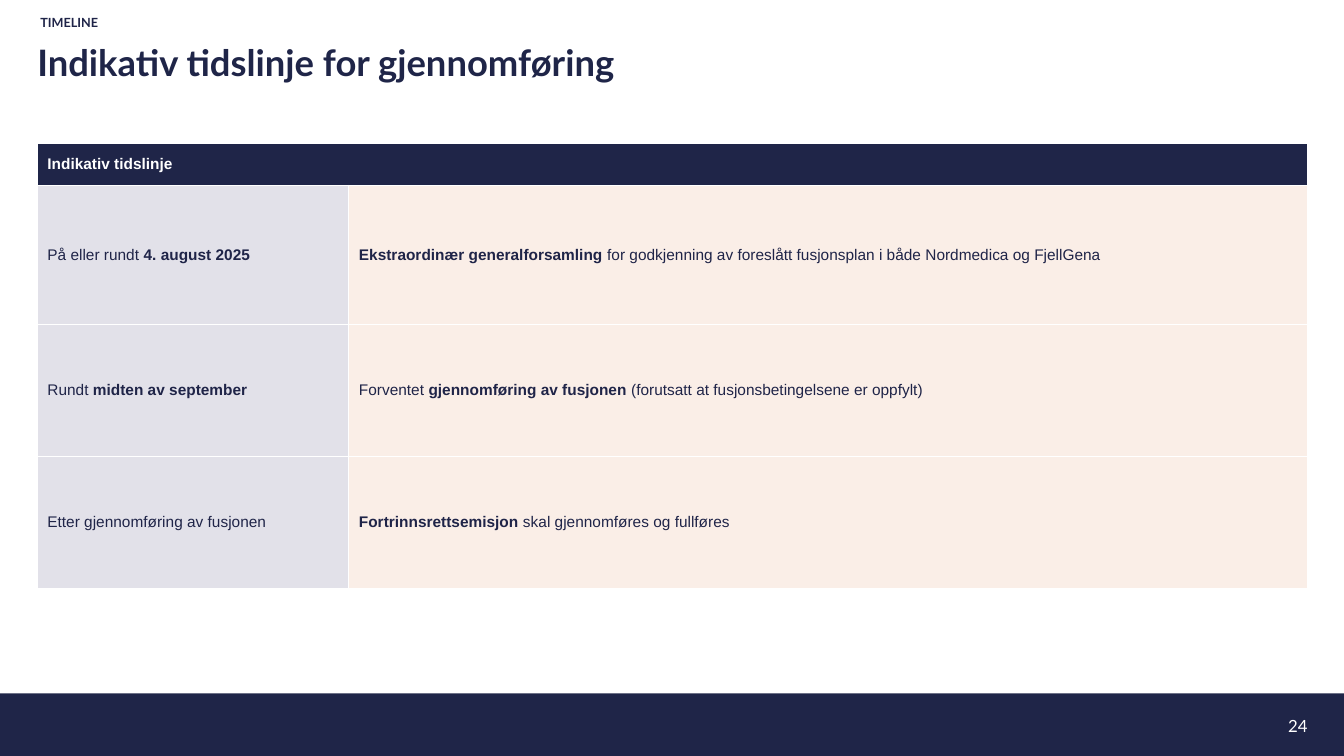
from lxml import etree
from pptx import Presentation
from pptx.dml.color import RGBColor
from pptx.enum import shapes, text
from pptx.oxml import ns
from pptx.util import Inches, Pt

NAVY, INK, WHITE = "1F2548", "1F2448", "FFFFFF"
LILAC, PEACH = "C7C4D4", "F7DED0"
COLUMN_WIDTHS = (3.09, 9.51)
ROW_HEIGHTS = (0.42, 1.38, 1.31, 1.31)

# Each cell is a list of (wording, bold) runs.
MILESTONES = [
    ([("På eller rundt ", False), ("4. august 2025", True)],
     [("Ekstraordinær generalforsamling", True),
      (" for godkjenning av foreslått fusjonsplan i både Nordmedica og FjellGena", False)]),
    ([("Rundt ", False), ("midten av september", True)],
     [("Forventet ", False), ("gjennomføring av fusjonen", True),
      (" (forutsatt at fusjonsbetingelsene er oppfylt)", False)]),
    ([("Etter gjennomføring av fusjonen", False)],
     [("Fortrinnsrettsemisjon ", True), ("skal gjennomføres og fullføres", False)]),
]


def rgb(value):
    return RGBColor.from_string(value)


def add_run(paragraph, wording, size, font, color, bold=False):
    run = paragraph.add_run()
    run.text = wording
    run.font.size, run.font.name, run.font.bold = Pt(size), font, bold
    run.font.color.rgb = rgb(color)


def add_label(slide, box, wording, size, color, bold=True, insets=(0, 0, 0, 0), wrap=True):
    """Add a one-line Lato text box; return its frame and paragraph."""
    frame = slide.shapes.add_textbox(*map(Inches, box)).text_frame
    frame.word_wrap = wrap
    (frame.margin_left, frame.margin_top,
     frame.margin_right, frame.margin_bottom) = map(Inches, insets)
    line = frame.paragraphs[0]
    add_run(line, wording, size, "Lato", color, bold)
    return frame, line


def add_heading(slide, left, top, width):
    _, title = add_label(slide, (left, top + 0.24, width, 0.81),
                         "Indikativ tidslinje for gjennomføring", 26, NAVY,
                         insets=(0, 0.05, 0.1, 0.05))
    _, section = add_label(slide, (left + 0.03, top, width, 0.29),
                           "TIMELINE", 9, INK, wrap=False)
    title.line_spacing = section.line_spacing = 0.9


def add_footer(slide, top, width, height):
    band = slide.shapes.add_shape(shapes.MSO_SHAPE.RECTANGLE, 0, Inches(top),
                                  Inches(width), Inches(height))
    band.shadow.inherit = False
    band.fill.solid()
    band.fill.fore_color.rgb = rgb(NAVY)
    band.line.fill.background()
    frame, number = add_label(slide, (width - 0.86, top + 0.12, 0.5, 0.4), "24", 12, WHITE,
                              bold=False, insets=(0.1, 0.05, 0, 0.05))
    frame.vertical_anchor = text.MSO_ANCHOR.MIDDLE
    number.alignment = text.PP_ALIGN.RIGHT


def add_borders(cell, sides):
    properties = cell._tc.get_or_add_tcPr()
    for side in sides:
        border = etree.SubElement(properties, ns.qn(f"a:ln{side}"), w=str(Pt(1)))
        fill = etree.SubElement(border, ns.qn("a:solidFill"))
        etree.SubElement(fill, ns.qn("a:srgbClr"), val=WHITE)


def fill_cell(cell, color, alpha=None):
    cell.fill.solid()
    cell.fill.fore_color.rgb = rgb(color)
    if alpha:
        shade = cell._tc.tcPr.find(".//" + ns.qn("a:solidFill") + "[last()]")
        shade = cell._tc.tcPr.find(ns.qn("a:solidFill")) if shade is None else shade
        shade = cell._tc.tcPr.find(ns.qn("a:solidFill") + "/" + ns.qn("a:srgbClr"))
        etree.SubElement(shade, ns.qn("a:alpha"), val=str(alpha * 1000))


def write_cell(cell, runs, color):
    cell.vertical_anchor = text.MSO_ANCHOR.MIDDLE
    for wording, bold in runs:
        add_run(cell.text_frame.paragraphs[0], wording, 11, "Arial", color, bold)


def add_timeline(slide, left, top):
    table = slide.shapes.add_table(
        len(ROW_HEIGHTS), len(COLUMN_WIDTHS), Inches(left), Inches(top),
        Inches(sum(COLUMN_WIDTHS)), Inches(sum(ROW_HEIGHTS))).table
    for column, width in zip(table.columns, COLUMN_WIDTHS):
        column.width = Inches(width)
    for row, height in zip(table.rows, ROW_HEIGHTS):
        row.height = Inches(height)

    header = table.cell(0, 0)
    header.merge(table.cell(0, 1))
    for cell in table.rows[0].cells:
        add_borders(cell, "RTB")
        fill_cell(cell, NAVY)
    write_cell(header, [("Indikativ tidslinje", True)], WHITE)

    for row, milestone in enumerate(MILESTONES, 1):
        for column, (runs, color, sides) in enumerate(
                zip(milestone, (LILAC, PEACH), ("RTB", "LRTB"))):
            cell = table.cell(row, column)
            add_borders(cell, sides)
            fill_cell(cell, color, alpha=50)
            write_cell(cell, runs, INK)


def main():
    deck = Presentation()
    deck.slide_width, deck.slide_height = Inches(13.33), Inches(7.5)
    slide = deck.slides.add_slide(deck.slide_layouts[6])
    add_footer(slide, 6.88, 13.33, 0.62)
    add_heading(slide, 0.37, 0.16, 10.87)
    add_timeline(slide, 0.37, 1.42)
    deck.save("out.pptx")


if __name__ == "__main__":
    main()
